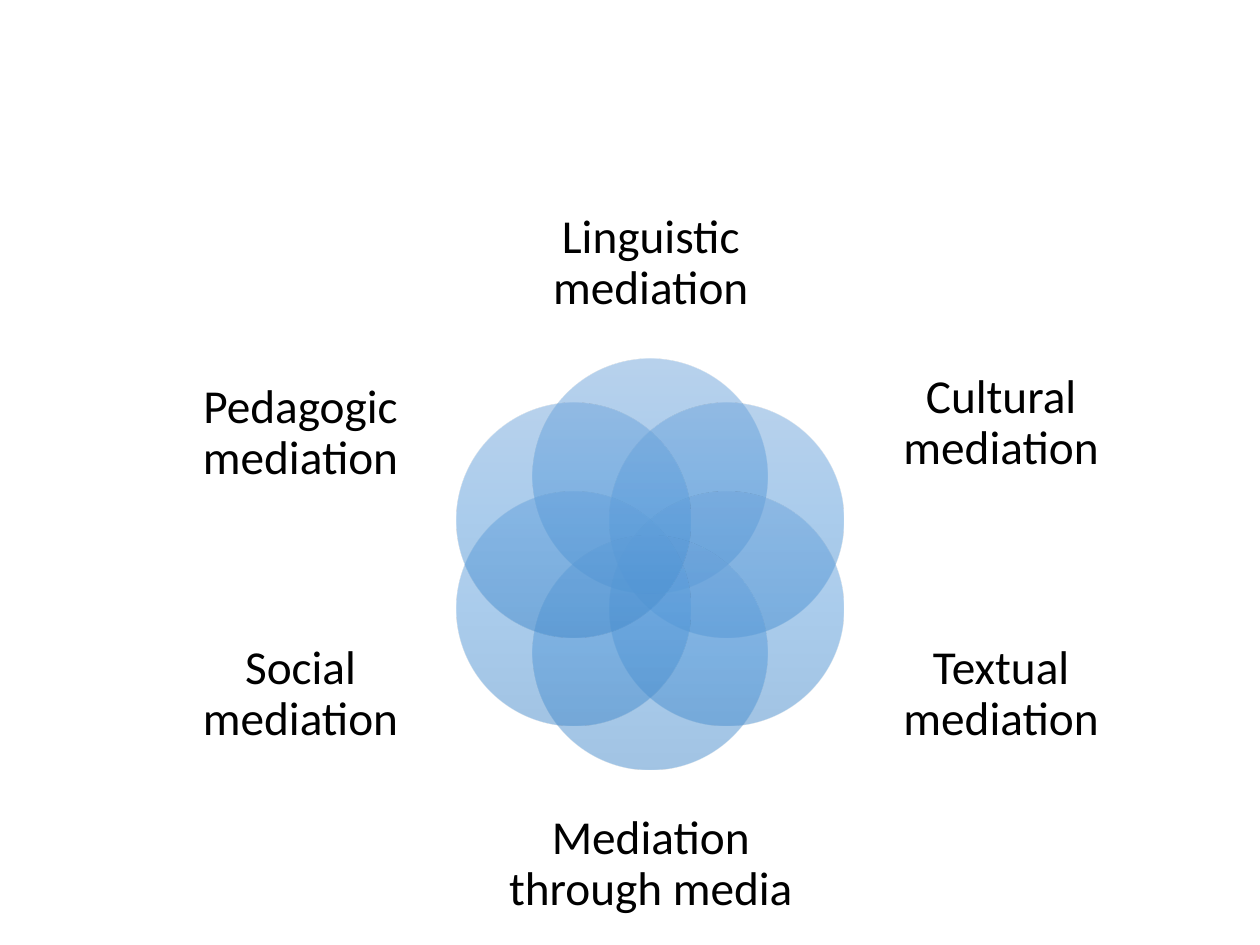
from copy import deepcopy
from math import cos, radians, sin

from pptx import Presentation
from pptx.dml.color import RGBColor
from pptx.enum.shapes import MSO_SHAPE
from pptx.enum.text import MSO_ANCHOR, PP_ALIGN
from pptx.oxml.ns import qn
from pptx.util import Inches, Pt
from lxml import etree

OVAL = MSO_SHAPE.OVAL
MIDDLE = MSO_ANCHOR.MIDDLE
CENTER = PP_ALIGN.CENTER

MID_X, MID_Y = 5.16, 4.48
ORBIT = 0.7
SIZE = 1.86
STOPS = [(0, "71A6DB"), (0.5, "559BDB"), (1, "448ACA")]
LABELS = [
    ("Linguistic mediation", (4, 1.46, 2.33, 1.27)),
    ("Cultural mediation", (6.84, 2.67, 2.21, 1.39)),
    ("Textual mediation", (6.84, 4.74, 2.21, 1.55)),
    ("Mediation through media", (4, 6.23, 2.33, 1.27)),
    ("Social mediation", (1.28, 4.74, 2.21, 1.55)),
    ("Pedagogic mediation", (0.99, 2.67, 2.79, 1.55)),
]


def color(code):
    return RGBColor.from_string(code)


def blend(shape, stops, alpha):
    fill = shape.fill
    fill.gradient()
    fill.gradient_angle = 270
    group = shape._element.spPr.find(qn("a:gradFill")).find(qn("a:gsLst"))
    group.append(deepcopy(group[0]))
    for stop, (place, code) in zip(fill.gradient_stops, stops):
        stop.position = place
        stop.color.rgb = color(code)
    for tone in group.iter(qn("a:srgbClr")):
        etree.SubElement(tone, qn("a:alpha")).set("val", str(alpha * 1000))


def add_petal(slide, angle):
    left = MID_X + ORBIT * sin(radians(angle)) - SIZE / 2
    top = MID_Y - ORBIT * cos(radians(angle)) - SIZE / 2
    petal = slide.shapes.add_shape(
        OVAL, Inches(left), Inches(top), Inches(SIZE), Inches(SIZE))
    petal.shadow.inherit = False
    petal.line.fill.background()
    blend(petal, STOPS, alpha=50)


def add_text(slide, text, box, size=27, font="Calibri", ink="000000"):
    frame = slide.shapes.add_textbox(*map(Inches, box)).text_frame
    frame.word_wrap = True
    frame.vertical_anchor = MIDDLE
    frame.margin_left = frame.margin_right = 0
    frame.margin_top = frame.margin_bottom = 0
    para = frame.paragraphs[0]
    para.alignment = CENTER
    para.line_spacing = 0.9
    run = para.add_run()
    run.text = text
    run.font.size = Pt(size)
    run.font.name = font
    run.font.color.rgb = color(ink)


def main():
    deck = Presentation()
    deck.slide_width, deck.slide_height = Inches(10), Inches(7.5)
    slide = deck.slides.add_slide(deck.slide_layouts[6])
    step = 360 / len(LABELS)
    for index, (text, box) in enumerate(LABELS):
        add_petal(slide, index * step)
        add_text(slide, text, box)
    deck.save("out.pptx")


if __name__ == "__main__":
    main()
